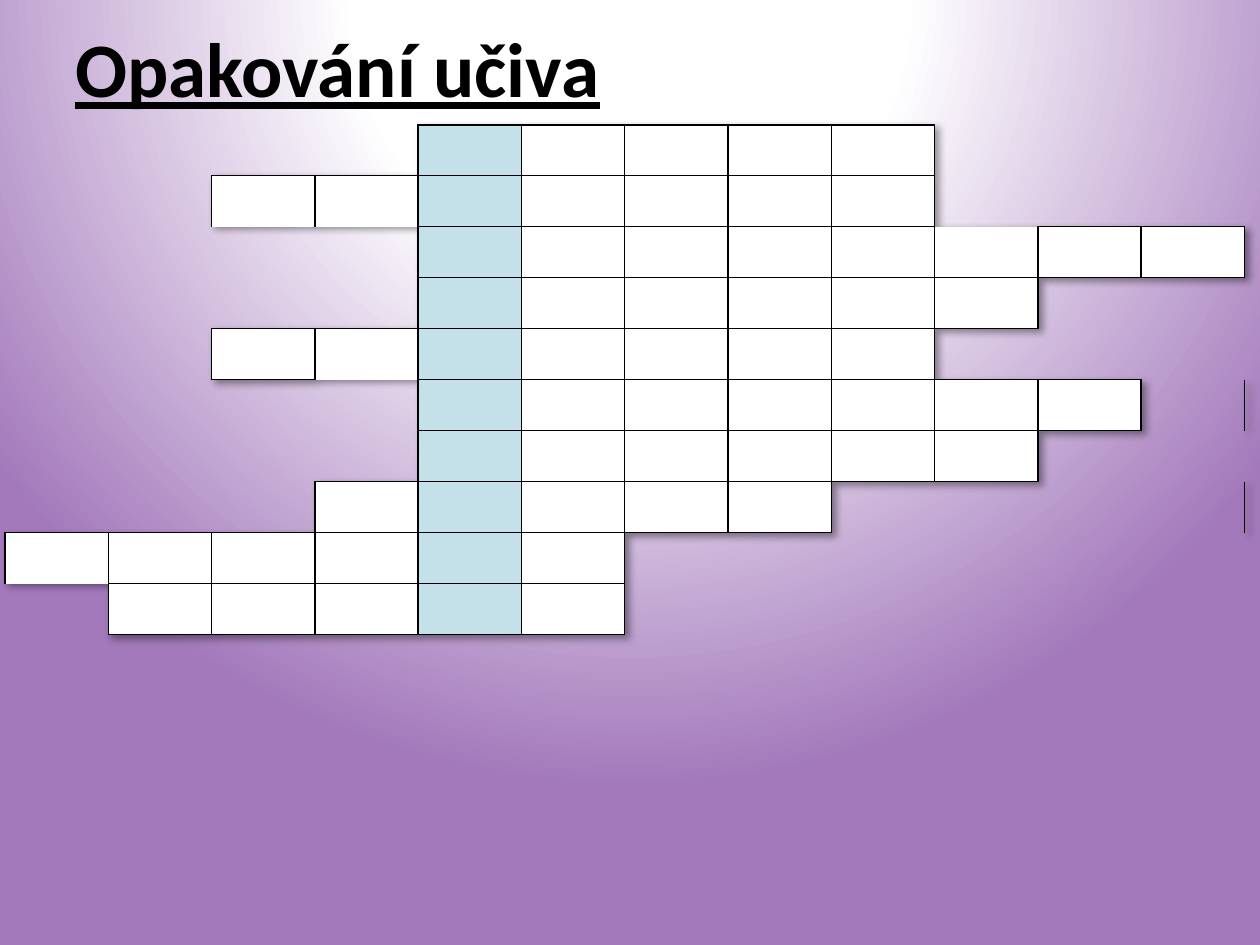
from lxml import etree
from pptx import Presentation
from pptx.dml.color import RGBColor
from pptx.enum.text import MSO_ANCHOR
from pptx.oxml.ns import qn
from pptx.util import Inches, Pt

MIDDLE = MSO_ANCHOR.MIDDLE
BLACK = RGBColor(0x00, 0x00, 0x00)
WHITE = RGBColor(0xFF, 0xFF, 0xFF)
PURPLE = RGBColor(0xA3, 0x79, 0xBB)
KEY_BLUE = RGBColor(0xC4, 0xE0, 0xE9)

# Crossword: first and last column of each answer
ANSWERS = [(4, 8), (2, 8), (4, 11), (4, 9), (2, 8),
           (4, 10), (4, 9), (3, 7), (0, 5), (1, 5)]
COLUMNS = 12
KEY_COLUMN = 4
OPEN_BOTTOMS = {(1, 2), (1, 3), (1, 9), (4, 3), (8, 0)}
EXTRA_RIGHTS = {(5, 11), (7, 11)}
SIDES = {"lnL": (0, -1), "lnR": (0, 1), "lnT": (-1, 0), "lnB": (1, 0)}


def is_letter(row, column):
    if not 0 <= row < len(ANSWERS):
        return False
    first, last = ANSWERS[row]
    return first <= column <= last


def has_border(row, column, side):
    if side == "lnR" and (row, column) in EXTRA_RIGHTS:
        return True
    upper_row = {"lnT": row - 1, "lnB": row}.get(side)
    if (upper_row, column) in OPEN_BOTTOMS:
        return False
    down, across = SIDES[side]
    return is_letter(row, column) or is_letter(row + down, column + across)


def add_xml(parent, tag, **attributes):
    return etree.SubElement(parent, qn(tag), attributes)


class SlideBuilder:
    font = "Calibri"
    line_width = Pt(1)

    def __init__(self, slide):
        self.slide = slide

    def background(self, stops):
        fill = self.slide.background.fill
        fill.gradient()
        gradient = self.slide._element.find(".//" + qn("a:gradFill"))
        for child in list(gradient):
            gradient.remove(child)
        stop_list = add_xml(gradient, "a:gsLst")
        for percent, color in stops:
            stop = add_xml(stop_list, "a:gs", pos=str(percent * 1000))
            add_xml(stop, "a:srgbClr", val=str(color))
        circle = add_xml(gradient, "a:path")
        circle.set("path", "circle")
        add_xml(circle, "a:fillToRect", l="50000", t="-80000", r="50000", b="180000")

    def title(self, text, left, top, width, height):
        frame = self.slide.shapes.add_textbox(left, top, width, height).text_frame
        frame.word_wrap = True
        frame.vertical_anchor = MIDDLE
        paragraph = frame.paragraphs[0]
        paragraph.text = text
        style = {"name": self.font, "size": Pt(44), "bold": True, "underline": True}
        for name, value in style.items():
            setattr(paragraph.font, name, value)
        paragraph.font.color.rgb = BLACK

    def border(self, cell, side, visible):
        line = add_xml(cell._tc.get_or_add_tcPr(), "a:" + side, w=str(self.line_width))
        if visible:
            add_xml(add_xml(line, "a:solidFill"), "a:srgbClr", val=str(BLACK))
        else:
            add_xml(line, "a:noFill")

    def table_shadow(self, table):
        effects = etree.Element(qn("a:effectLst"))
        shadow = add_xml(effects, "a:outerShdw", blurRad="50800", dist="38100",
                         dir="2700000", algn="tl", rotWithShape="0")
        color = add_xml(shadow, "a:srgbClr", val=str(BLACK))
        add_xml(color, "a:alpha", val="40000")
        table._tbl.tblPr.insert(0, effects)

    def crossword(self, left, top, width, height):
        rows = len(ANSWERS)
        table = self.slide.shapes.add_table(rows, COLUMNS, left, top, width, height).table
        table.first_row = False
        table.horz_banding = False
        self.table_shadow(table)
        for row in range(rows):
            for column in range(COLUMNS):
                cell = table.cell(row, column)
                for side in SIDES:
                    self.border(cell, side, has_border(row, column, side))
                if is_letter(row, column):
                    cell.fill.solid()
                    cell.fill.fore_color.rgb = KEY_BLUE if column == KEY_COLUMN else WHITE
                else:
                    cell.fill.background()


def main():
    presentation = Presentation()
    presentation.slide_width = Inches(10)
    presentation.slide_height = Inches(7.5)
    builder = SlideBuilder(presentation.slides.add_slide(presentation.slide_layouts[6]))

    # Background and heading
    builder.background([(0, WHITE), (35, WHITE), (100, PURPLE)])
    builder.title("Opakování učiva", Inches(0.5), Inches(0.3), Inches(9), Inches(0.46))

    # Crossword grid
    builder.crossword(Inches(0.04), Inches(0.99), Inches(9.84), Inches(4.05))

    presentation.save("out.pptx")


if __name__ == "__main__":
    main()
